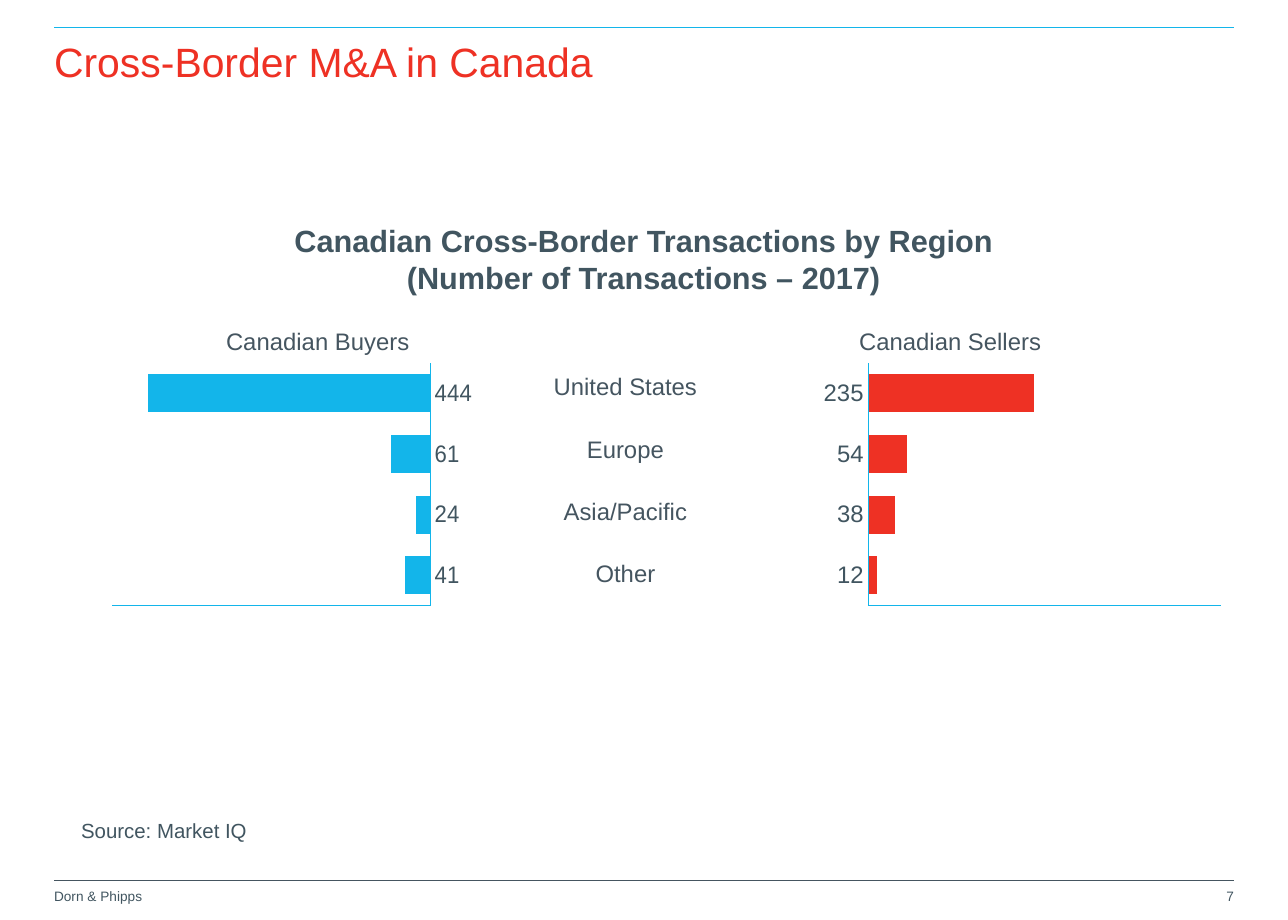
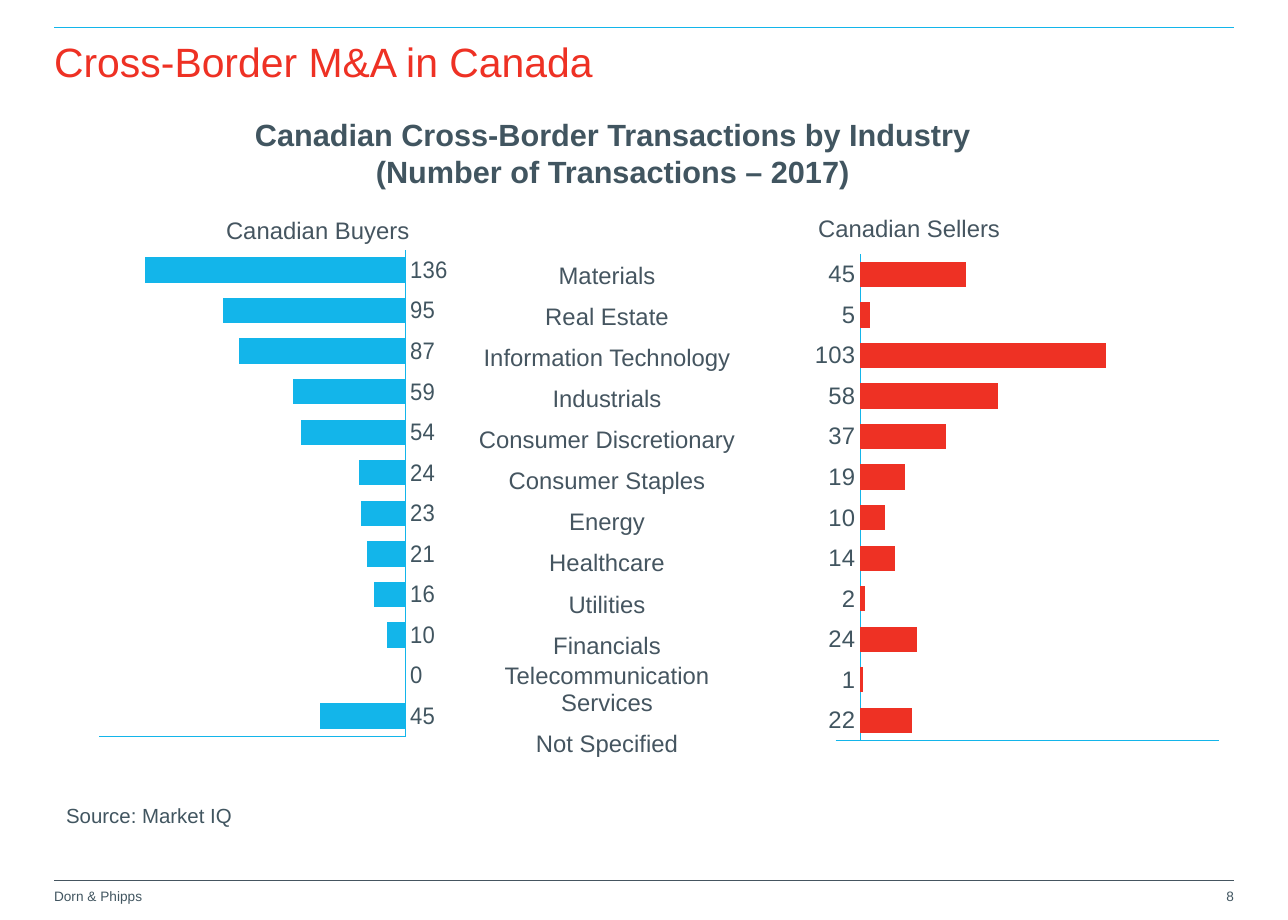
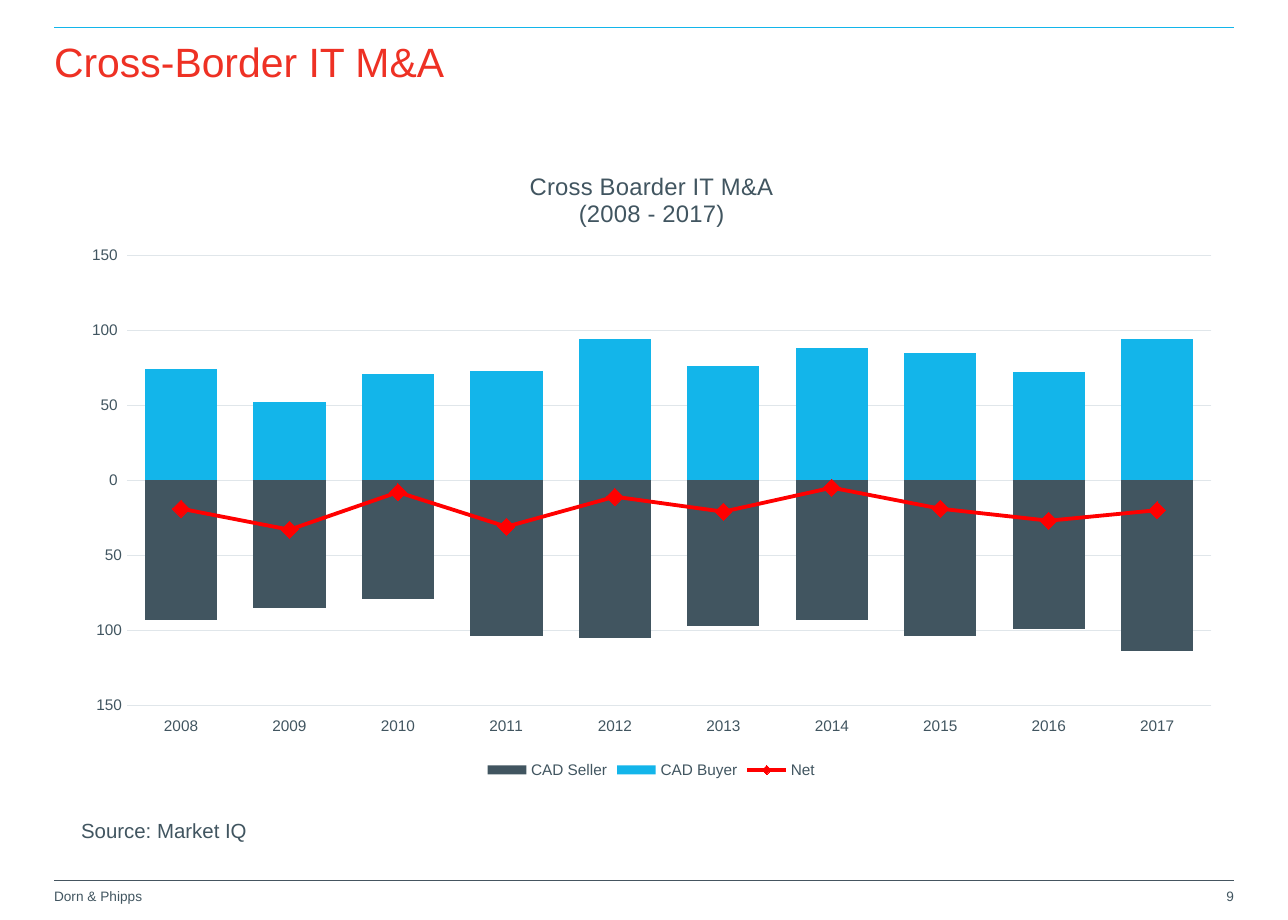
from lxml import etree
from pptx import Presentation
from pptx.chart.data import CategoryChartData
from pptx.dml.color import RGBColor
from pptx.enum import chart as kinds, shapes, text
from pptx.oxml import parse_xml
from pptx.oxml.ns import nsdecls, qn
from pptx.util import Cm, Pt

# Shared style
FONT = "Arial"
SLATE = RGBColor(0x41, 0x55, 0x60)
LABEL = RGBColor(0x45, 0x55, 0x60)
RED = RGBColor(0xEE, 0x31, 0x24)
NET_RED = RGBColor(0xFF, 0x00, 0x00)
CYAN = RGBColor(0x13, 0xB5, 0xEA)
GRID = RGBColor(0xE0, 0xE6, 0xEA)
LEFT, RIGHT = 1.12, 25.55
FIRST_NUMBER = 7
COMPANY = "Dorn & Phipps"
SOURCE = "Source: Market IQ"


# Text
def style(font, size, color=SLATE, bold=False):
    font.name, font.size, font.bold = FONT, Pt(size), bold
    font.color.rgb = color


def fill_frame(frame, wording, size, color=SLATE, bold=False, align=text.PP_ALIGN.LEFT, spacing=None):
    frame.text = wording
    for para in frame.paragraphs:
        para.alignment = align
        if spacing:
            para.line_spacing = Pt(spacing)
        for span in para.runs:
            style(span.font, size, color, bold)


def clear_margins(frame):
    frame.margin_left = frame.margin_right = frame.margin_top = frame.margin_bottom = 0


def add_text(page, wording, left, top, width, height, **look):
    box = page.shapes.add_textbox(Cm(left), Cm(top), Cm(width), Cm(height))
    box.text_frame.word_wrap = True
    clear_margins(box.text_frame)
    fill_frame(box.text_frame, wording, **look)
    return box


# Frame of every slide
def add_rule(page, top, color, weight):
    rule = page.shapes.add_connector(shapes.MSO_CONNECTOR.STRAIGHT, Cm(LEFT), Cm(top), Cm(RIGHT), Cm(top))
    rule.line.color.rgb = color
    rule.line.width = Pt(weight)
    etree.SubElement(rule.element.spPr, qn("a:effectLst"))


def make_number_field(box):
    """Turn the only run of the box into a slide number field."""
    run = box.text_frame.paragraphs[0].runs[0]._r
    field = parse_xml(f'<a:fld {nsdecls("a")} id="{{B6F15528-21DE-4FAA-801E-634DDDAF4B2B}}" type="slidenum"/>')
    run.addprevious(field)
    field.extend(list(run))
    run.getparent().remove(run)


def add_page(deck, title, source_left=1.68, source_top=16.94):
    page = deck.slides.add_slide(deck.slide_layouts[5])
    number = FIRST_NUMBER + len(deck.slides) - 1
    add_rule(page, 0.56, CYAN, 0.5)
    add_rule(page, 18.22, LABEL, 0.25)
    add_text(page, COMPANY, LEFT, 18.39, 6, 0.35, size=8)
    make_number_field(add_text(page, str(number), RIGHT - 2, 18.39, 2, 0.35,
                               size=8, align=text.PP_ALIGN.RIGHT))
    add_text(page, SOURCE, source_left, source_top, 22, 0.5, size=12)

    head = page.shapes.title
    head.left, head.top, head.width, head.height = Cm(LEFT), Cm(0.76), Cm(RIGHT - LEFT), Cm(2.97)
    frame = head.text_frame
    clear_margins(frame)
    frame.vertical_anchor = text.MSO_ANCHOR.TOP
    frame.auto_size = text.MSO_AUTO_SIZE.NONE
    fill_frame(frame, title, 24, RED)
    return page


def add_heading(page, wording, left, top, width):
    add_text(page, wording, left, top, width, 1.55, size=18, bold=True, align=text.PP_ALIGN.CENTER)


# Table of names between two bar charts
def add_names(page, names, left, top, row_height, bottom):
    width = Cm(6.3)
    table = page.shapes.add_table(len(names), 1, Cm(left), Cm(top), width, Cm(row_height * len(names))).table
    table.first_row = table.horz_banding = False
    table.columns[0].width = width
    for row, name in zip(table.rows, names):
        row.height = Cm(row_height)
        cell = row.cells[0]
        cell.fill.background()
        cell.vertical_anchor = text.MSO_ANCHOR.BOTTOM
        cell.margin_left = cell.margin_right = Cm(0.05)
        cell.margin_top, cell.margin_bottom = 0, Cm(bottom)
        fill_frame(cell.text_frame, name, 14, LABEL, align=text.PP_ALIGN.CENTER)


# Charts
def manual_layout(x, y, w=None, h=None):
    """Place a part of a chart, in percent of the chart's size."""
    target = '<c:layoutTarget val="inner"/>' if w else ""
    size = f'<c:w val="{w / 100}"/><c:h val="{h / 100}"/>' if w else ""
    return parse_xml(
        f'<c:layout {nsdecls("c")}><c:manualLayout>{target}<c:xMode val="edge"/><c:yMode val="edge"/>'
        f'<c:x val="{x / 100}"/><c:y val="{y / 100}"/>{size}</c:manualLayout></c:layout>')


def place_plot(chart, layout):
    area = chart.element.find(".//" + qn("c:plotArea"))
    for old in area.findall(qn("c:layout")):
        area.remove(old)
    area.insert(0, manual_layout(*layout))


def add_chart(page, kind, categories, series, place, size, layout):
    data = CategoryChartData()
    data.categories = categories
    for name, values in series:
        data.add_series(name, values)
    chart = page.shapes.add_chart(kind, *(Cm(length) for length in place), data).chart
    chart.has_title = chart.has_legend = False
    style(chart.font, size)
    chart.plots[0].vary_by_categories = False
    for axis in (chart.category_axis, chart.value_axis):
        axis.major_tick_mark = axis.minor_tick_mark = kinds.XL_TICK_MARK.NONE
        axis.has_major_gridlines = False
        style(axis.tick_labels.font, size)
    place_plot(chart, layout)
    return chart


def paint_bars(series, color):
    series.invert_if_negative = False
    series.format.fill.solid()
    series.format.fill.fore_color.rgb = color


def add_bars(page, counts, percents, place, color, limits, layout=(15, 0, 81.9, 95), reverse=False):
    """Horizontal bars, listed from top to bottom; the counts label the axis."""
    chart = add_chart(page, kinds.XL_CHART_TYPE.BAR_CLUSTERED, [str(count) for count in reversed(counts)],
                      [("Series 1", percents[::-1])], place, 14, layout)
    chart.plots[0].gap_width = 60
    paint_bars(chart.series[0], color)
    values = chart.value_axis
    values.minimum_scale, values.maximum_scale = limits
    values.reverse_order = reverse
    values.tick_label_position = kinds.XL_TICK_LABEL_POSITION.NONE
    for axis in (chart.category_axis, values):
        axis.format.line.color.rgb = CYAN
        axis.format.line.width = Pt(0.75)


def add_side_labels(page, buyers_top, sellers_left, sellers_top):
    look = dict(size=14, color=LABEL, spacing=15)
    add_text(page, "Canadian Buyers", 2.48, buyers_top, 6, 0.5, align=text.PP_ALIGN.RIGHT, **look)
    add_text(page, "Canadian Sellers", sellers_left, sellers_top, 6, 0.5, **look)


def move_last_series_to_line(chart):
    bars = chart.element.find(".//" + qn("c:barChart"))
    series = bars.findall(qn("c:ser"))[-1]
    for flag in series.findall(qn("c:invertIfNegative")):
        series.remove(flag)
    line = parse_xml(f'<c:lineChart {nsdecls("c")}><c:grouping val="standard"/><c:varyColors val="0"/>'
                     '<c:marker val="1"/></c:lineChart>')
    line.insert(2, series)
    for axis in bars.findall(qn("c:axId")):
        etree.SubElement(line, qn("c:axId")).set("val", axis.get("val"))
    bars.addnext(line)


def add_net_chart(page, title, years, series):
    chart = add_chart(page, kinds.XL_CHART_TYPE.COLUMN_CLUSTERED, years, series,
                      (1.42, 3.07, 24.13, 13.16), 9, (5, 16.85, 93.08, 70.8))
    move_last_series_to_line(chart)
    columns, line = chart.plots
    columns.gap_width, columns.overlap = 50, 100
    for bars, color in zip(columns.series, (SLATE, CYAN)):
        paint_bars(bars, color)

    net = line.series[0]
    net.smooth = False
    net.format.line.color.rgb = NET_RED
    net.format.line.width = Pt(2.25)
    net.marker.style, net.marker.size = kinds.XL_MARKER_STYLE.DIAMOND, 10
    net.marker.format.fill.solid()
    net.marker.format.fill.fore_color.rgb = NET_RED
    net.marker.format.line.color.rgb = NET_RED

    values, category = chart.value_axis, chart.category_axis
    values.minimum_scale, values.maximum_scale, values.major_unit = -150, 150, 50
    values.tick_labels.number_format = "#,##0_);#,##0"
    values.tick_labels.number_format_is_linked = False
    values.format.line.fill.background()
    values.has_major_gridlines = True
    category.tick_label_position = kinds.XL_TICK_LABEL_POSITION.LOW
    for ruled in (values.major_gridlines, category):
        ruled.format.line.color.rgb = GRID
        ruled.format.line.width = Pt(0.75)

    chart.has_legend = True
    chart.legend.position = kinds.XL_LEGEND_POSITION.BOTTOM
    chart.legend.include_in_layout = False
    style(chart.legend.font, 9)

    fill_frame(chart.chart_title.text_frame, title, 14, align=text.PP_ALIGN.CENTER)
    heading = chart.chart_title.element
    for old in heading.findall(qn("c:layout")):
        heading.remove(old)
    heading.find(qn("c:tx")).addnext(manual_layout(39.25, 3.05))


# Slides
def add_region_page(deck):
    page = add_page(deck, "Cross-Border M&A in Canada")
    add_heading(page, "Canadian Cross-Border Transactions by Region\n(Number of Transactions – 2017)", 6.03, 4.6, 14.6)
    add_side_labels(page, 6.83, 17.79, 6.83)
    add_bars(page, [444, 61, 24, 41], [100, 14, 5, 9], (1.12, 7.5, 8.66, 5.31),
             CYAN, (0, 112.5), reverse=True)
    add_names(page, ["United States", "Europe", "Asia/Pacific", "Other"], 9.8, 7.26, 1.29, 0.25)
    add_bars(page, [235, 54, 38, 12], [100, 23, 16, 5], (16.12, 7.5, 9.45, 5.31),
             RED, (0, 213), layout=(19.8, 0, 77.1, 95))


def add_industry_page(deck):
    page = add_page(deck, "Cross-Border M&A in Canada", source_left=1.37, source_top=16.64)
    add_heading(page, "Canadian Cross-Border Transactions by Industry\n(Number of Transactions – 2017)",
                5.21, 2.4, 14.96)
    add_side_labels(page, 4.52, 16.94, 4.49)
    add_bars(page, [136, 95, 87, 59, 54, 24, 23, 21, 16, 10, 0, 45],
             [100, 70, 64, 43, 40, 18, 17, 15, 12, 7, 0, 33],
             (0.89, 5.16, 8.38, 10.62), CYAN, (0, 117.6), reverse=True)
    add_bars(page, [45, 5, 103, 58, 37, 19, 10, 14, 2, 24, 1, 22],
             [43, 4, 100, 56, 35, 18, 10, 14, 2, 23, 1, 21],
             (15.85, 5.25, 9.7, 10.62), RED, (-10, 146))
    add_names(page, ["Materials", "Real Estate", "Information Technology", "Industrials",
                     "Consumer Discretionary", "Consumer Staples", "Energy", "Healthcare", "Utilities",
                     "Financials", "Telecommunication Services", "Not Specified"], 9.42, 5.15, 0.85, 0)


def add_technology_page(deck):
    page = add_page(deck, "Cross-Border IT M&A")
    sellers = [-93, -85, -79, -104, -105, -97, -93, -104, -99, -114]
    buyers = [74, 52, 71, 73, 94, 76, 88, 85, 72, 94]
    net = [-19, -33, -8, -31, -11, -21, -5, -19, -27, -20]
    add_net_chart(page, "Cross Boarder IT M&A\n(2008 - 2017)", [str(year) for year in range(2008, 2018)],
                  [("CAD Seller", sellers), ("CAD Buyer", buyers), ("Net", net)])


def main():
    deck = Presentation()
    deck.slide_width, deck.slide_height = Cm(26.67), Cm(19.05)
    deck.element.set("firstSlideNum", str(FIRST_NUMBER))
    add_region_page(deck)
    add_industry_page(deck)
    add_technology_page(deck)
    deck.save("out.pptx")


if __name__ == "__main__":
    main()
